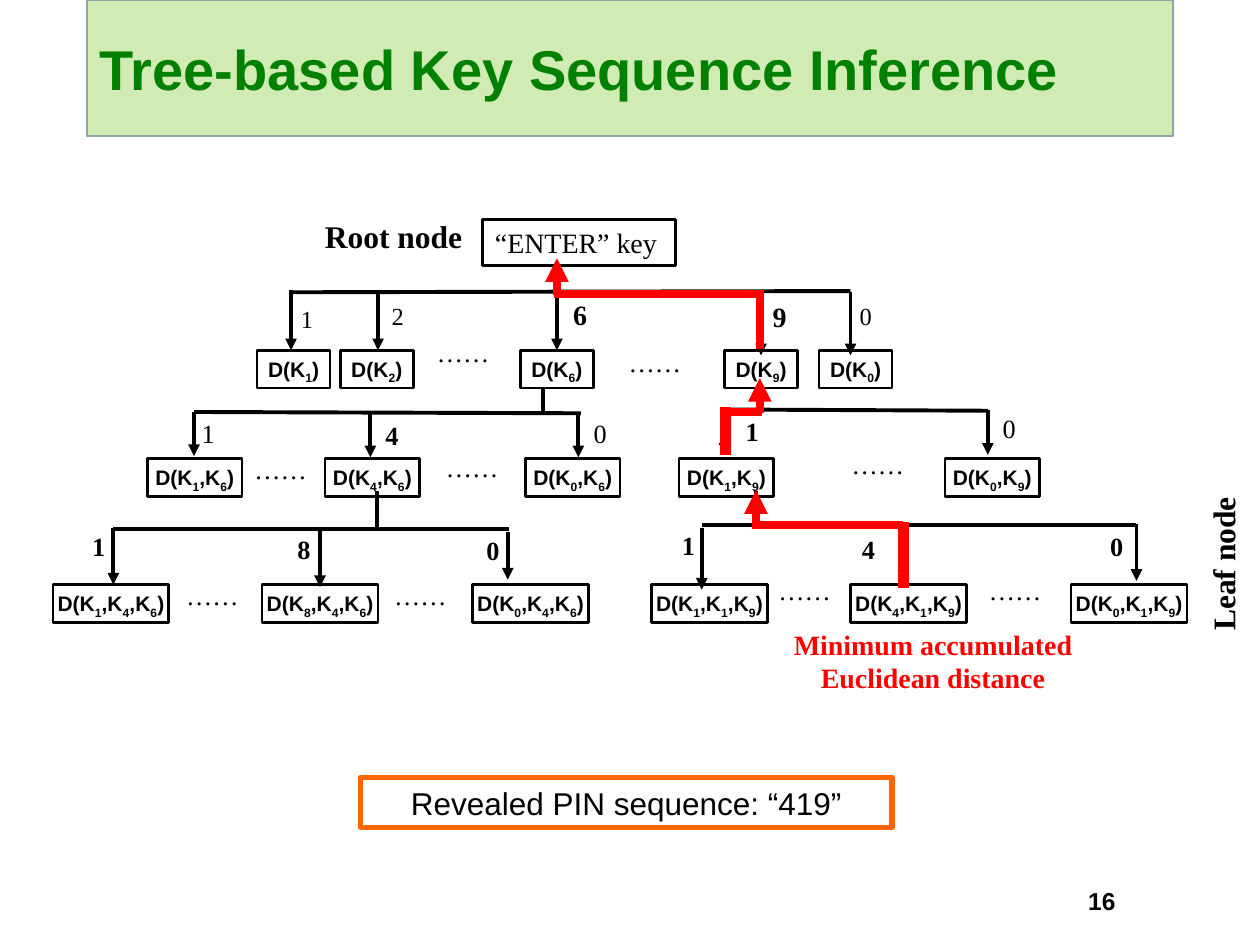
from dataclasses import dataclass

import pptx
import pptx.dml.color
import pptx.enum.shapes
import pptx.enum.text
import pptx.oxml
import pptx.oxml.ns
import pptx.util

Inches = pptx.util.Inches
RGBColor = pptx.dml.color.RGBColor
Align = pptx.enum.text.PP_ALIGN
Anchor = pptx.enum.text.MSO_ANCHOR

BLACK = RGBColor(0x00, 0x00, 0x00)
WHITE = RGBColor(0xFF, 0xFF, 0xFF)
RED = RGBColor(0xFF, 0x00, 0x00)
ORANGE = RGBColor(0xFF, 0x66, 0x00)
GREEN = RGBColor(0x00, 0x80, 0x00)
PALE_GREEN = RGBColor(0xD0, 0xEB, 0xB3)
GREY_BLUE = RGBColor(0x8A, 0xA6, 0xA8)
SERIF = "Times New Roman"
SANS = "Arial"
DOTS = "……"


@dataclass
class Label:
    text: str
    left: float
    top: float
    width: float
    height: float = 0.35
    size: float = 15
    bold: bool = False
    color: RGBColor = BLACK
    font: str = SERIF
    align: Align = Align.LEFT
    rotation: float = 0


@dataclass
class Box:
    label: Label
    line_color: RGBColor = BLACK
    line_width: float = 1.5
    fill: RGBColor | None = None


@dataclass
class Level:
    top: float
    width: float
    nodes: dict[float, str]


@dataclass
class Edge:
    x1: float
    y1: float
    x2: float
    y2: float
    arrow: bool = False
    width: float = 2.25
    color: RGBColor = BLACK


LABELS = [
    Label("16", 7.58, 6.98, 2.33, 0.37, 14, True, font=SANS, align=Align.CENTER),
    Label("Root node", 2.48, 1.67, 1.55, 0.4, 18, True),
    Label("Leaf node", 8.93, 4.13, 1.55, 0.4, 18, True, rotation=270),
    Label("1", 2.29, 2.36, 0.24, size=14),
    Label("2", 3.01, 2.34, 0.24, size=14),
    Label("6", 4.45, 2.31, 0.32, size=16, bold=True),
    Label("9", 6.11, 2.33, 0.12, size=16, bold=True),
    Label("0", 6.77, 2.34, 0.15, size=14),
    Label("1", 1.54, 3.26, 0.16),
    Label("4", 2.96, 3.28, 0.2, bold=True),
    Label("0", 4.68, 3.26, 0.13),
    Label("1", 5.82, 3.25, 0.24, bold=True),
    Label("0", 7.86, 3.22, 0.24),
    Label("1", 0.73, 4.16, 0.1, 0.64, bold=True),
    Label("8", 2.36, 4.18, 0.1, 0.64, bold=True),
    Label("0", 3.86, 4.19, 0.1, 0.64, bold=True),
    Label("1", 5.38, 4.15, 0.13, 0.64, bold=True),
    Label("4", 6.81, 4.18, 0.13, 0.64, bold=True),
    Label("0", 8.81, 4.16, 0.1, 0.64, bold=True),
    Label(DOTS, 3.37, 2.62, 0.76),
    Label(DOTS, 4.89, 2.7, 0.69),
    Label(DOTS, 1.92, 3.55, 0.71),
    Label(DOTS, 3.44, 3.53, 0.67),
    Label(DOTS, 6.66, 3.51, 0.69),
    Label(DOTS, 1.38, 4.55, 0.74),
    Label(DOTS, 3.03, 4.55, 0.72),
    Label(DOTS, 6.08, 4.51, 0.64),
    Label(DOTS, 7.75, 4.51, 0.63),
    Label("Minimum accumulated Euclidean distance", 6.09, 4.93, 2.63, 0.64, 16, True,
          RED, align=Align.CENTER),
]

BOXES = [
    Box(Label("“ENTER” key", 3.83, 1.74, 1.53, 0.37, 16)),
    Box(Label("Revealed PIN sequence: “419”", 2.86, 6.17, 4.22, 0.4, 18, font=SANS,
              align=Align.CENTER), ORANGE, 3, WHITE),
]

LEVELS = [
    Level(2.78, 0.58, {2.04: "1", 2.7: "2", 4.13: "6", 5.75: "9", 6.5: "0"}),
    Level(3.64, 0.75, {1.17: "16", 2.58: "46", 4.17: "06", 5.39: "19", 7.5: "09"}),
    Level(4.64, 0.92, {0.42: "146", 2.08: "846", 3.75: "046",
                       5.17: "119", 6.75: "419", 8.5: "019"}),
]

BRANCHES = [
    Edge(4.42, 2.11, 4.42, 2.38),
    Edge(2.31, 2.32, 6.75, 2.31),
    Edge(4.31, 3.07, 4.31, 3.28),
    Edge(1.54, 3.27, 4.61, 3.28),
    Edge(6.03, 3.04, 6.03, 3.25, True),
    Edge(5.76, 3.25, 7.84, 3.26),
    Edge(2.99, 3.9, 2.99, 4.18),
    Edge(0.9, 4.2, 4.04, 4.2),
    Edge(6, 3.9, 6, 4.17),
    Edge(5.57, 4.17, 9.02, 4.17),
]

DROPS = [
    (2.31, 2.3, 2.78), (3, 2.32, 2.78), (4.42, 2.34, 2.78), (6.04, 2.32, 2.82),
    (6.75, 2.32, 2.82), (1.54, 3.27, 3.62), (2.94, 3.28, 3.63), (4.59, 3.28, 3.63),
    (5.75, 3.25, 3.61), (7.84, 3.25, 3.61), (0.9, 4.19, 4.64), (2.54, 4.21, 4.66),
    (4.03, 4.22, 4.6), (5.57, 4.19, 4.68), (7.17, 4.17, 4.62), (9.02, 4.16, 4.61),
]

MINIMUM_ROUTE = [
    Edge(7.17, 4.14, 7.17, 4.67, False, 6, RED),
    Edge(4.42, 2.34, 4.42, 2.05, True, 4.5, RED),
    Edge(4.4, 2.33, 6.01, 2.33, False, 4.5, RED),
    Edge(5.76, 3.23, 5.76, 3.61, False, 6, RED),
    Edge(6.03, 2.3, 6.03, 2.77, False, 4.5, RED),
    Edge(5.97, 4.17, 7.17, 4.17, False, 4.5, RED),
    Edge(6.03, 3.28, 6.03, 3, True, 4.5, RED),
    Edge(5.72, 3.27, 6.05, 3.27, False, 4.5, RED),
    Edge(6, 4.17, 6, 3.89, True, 4.5, RED),
]


def apply_format(target, values: dict) -> None:
    for name, value in values.items():
        setattr(target, name, value)


def format_font(font, label: Label) -> None:
    apply_format(font, {"name": label.font, "size": pptx.util.Pt(label.size), "bold": label.bold})
    font.color.rgb = label.color


def write_label(shape, label: Label) -> None:
    apply_format(shape.text_frame, {"word_wrap": True, "vertical_anchor": Anchor.TOP})
    paragraph = shape.text_frame.paragraphs[0]
    paragraph.alignment = label.align
    run = paragraph.add_run()
    run.text = label.text
    format_font(run.font, label)


def frame(label: Label) -> list:
    return [Inches(value) for value in (label.left, label.top, label.width, label.height)]


def draw_label(slide, label: Label) -> None:
    shape = slide.shapes.add_textbox(*frame(label))
    shape.rotation = label.rotation
    write_label(shape, label)


def draw_box(slide, box: Box):
    shape = slide.shapes.add_shape(pptx.enum.shapes.MSO_SHAPE.RECTANGLE, *frame(box.label))
    shape.shadow.inherit = False
    if box.fill is None:
        shape.fill.background()
    else:
        shape.fill.solid()
        shape.fill.fore_color.rgb = box.fill
    shape.line.color.rgb = box.line_color
    shape.line.width = pptx.util.Pt(box.line_width)
    write_label(shape, box.label)
    return shape


def draw_node(slide, level: Level, left: float, keys: str) -> None:
    label = Label("D(K", left, level.top, level.width, 0.3, 12, True, font=SANS, align=Align.CENTER)
    shape = draw_box(slide, Box(label))
    apply_format(shape.text_frame, {"margin_left": 0, "margin_right": 0})
    paragraph = shape.text_frame.paragraphs[0]
    for index, key in enumerate(keys, 1):
        for text, baseline in ((key, "-25000"), (")" if index == len(keys) else ",K", "0")):
            run = paragraph.add_run()
            run.text = text
            format_font(run.font, label)
            run.font._element.set("baseline", baseline)


def draw_edge(slide, edge: Edge) -> None:
    points = [Inches(value) for value in (edge.x1, edge.y1, edge.x2, edge.y2)]
    connector = slide.shapes.add_connector(pptx.enum.shapes.MSO_CONNECTOR.STRAIGHT, *points)
    connector.line.color.rgb = edge.color
    connector.line.width = pptx.util.Pt(edge.width)
    if edge.arrow:
        tail = pptx.oxml.parse_xml(f'<a:tailEnd {pptx.oxml.ns.nsdecls("a")} type="triangle"/>')
        connector.line._get_or_add_ln().append(tail)
    effects = pptx.oxml.parse_xml(f'<a:effectLst {pptx.oxml.ns.nsdecls("a")}/>')
    connector._element.spPr.append(effects)


def draw_title(slide) -> None:
    title = slide.shapes.title
    label = Label("Tree-based Key Sequence Inference", 0.69, 0, 8.62, 1.08, 32, True, GREEN, SANS)
    apply_format(title, dict(zip(("left", "top", "width", "height"), frame(label))))
    title.fill.solid()
    title.fill.fore_color.rgb = PALE_GREEN
    title.line.color.rgb = GREY_BLUE
    title.line.width = pptx.util.Pt(1)
    write_label(title, label)
    title.text_frame.vertical_anchor = Anchor.MIDDLE


def main() -> None:
    presentation = pptx.Presentation()
    apply_format(presentation, {"slide_width": Inches(10), "slide_height": Inches(7.5)})
    slide = presentation.slides.add_slide(presentation.slide_layouts[5])
    draw_title(slide)
    for label in LABELS:
        draw_label(slide, label)
    for box in BOXES:
        draw_box(slide, box)
    for edge in BRANCHES + [Edge(x, top, x, bottom, True) for x, top, bottom in DROPS]:
        draw_edge(slide, edge)
    for level in LEVELS:
        for left, keys in level.nodes.items():
            draw_node(slide, level, left, keys)
    for edge in MINIMUM_ROUTE:
        draw_edge(slide, edge)
    presentation.save("out.pptx")


if __name__ == "__main__":
    main()
